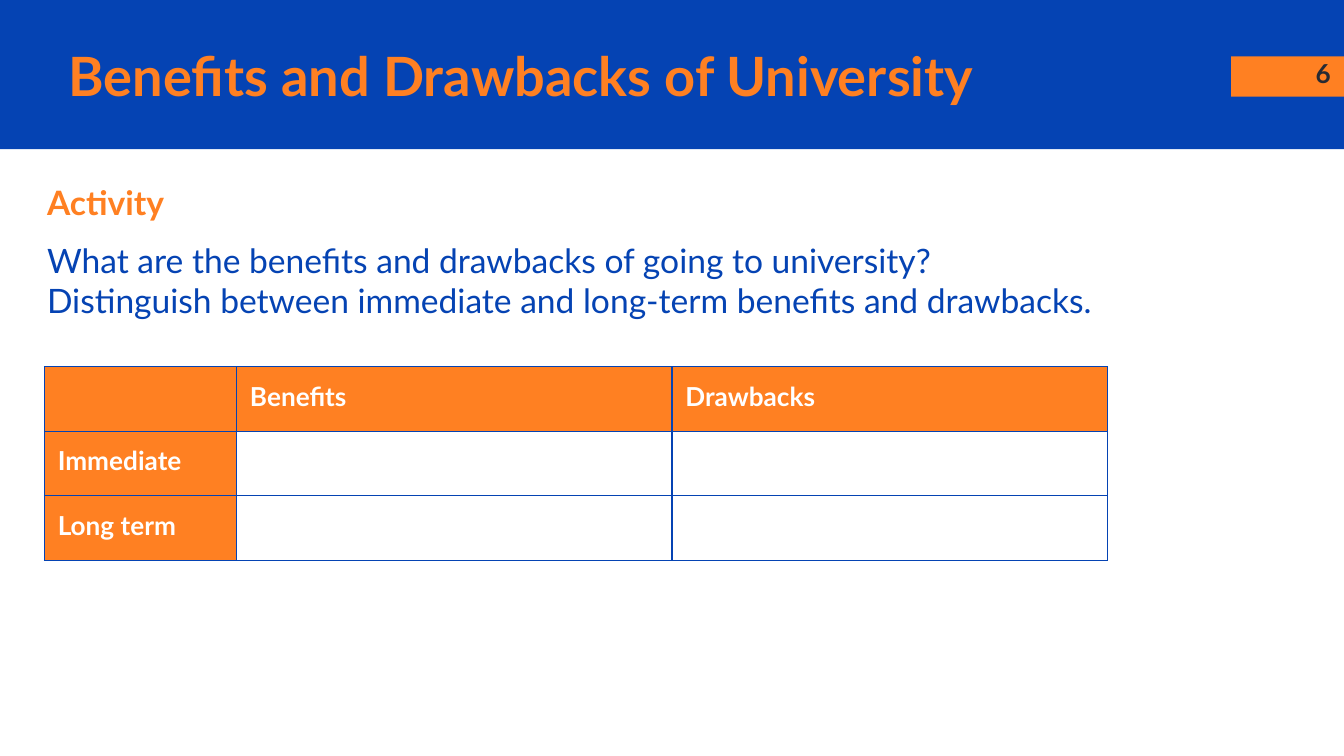
from lxml.etree import SubElement
from pptx import Presentation
from pptx.dml.color import RGBColor
from pptx.enum.shapes import MSO_SHAPE
from pptx.enum.text import MSO_ANCHOR, MSO_AUTO_SIZE, PP_ALIGN
from pptx.oxml.ns import qn
from pptx.util import Inches, Pt

BLUE = RGBColor(0x05, 0x43, 0xB3)
ORANGE = RGBColor(0xFF, 0x80, 0x22)
DARK = RGBColor(0x26, 0x2A, 0x33)
WHITE = RGBColor(0xFF, 0xFF, 0xFF)
WIDE = Inches(10)
HEADS = ["", "Benefits", "Drawbacks"]
ROWS = [HEADS, ["Immediate", "", ""], ["Long term", "", ""]]
WIDTHS = [1.43, 3.24, 3.24]
MARGINS = ("margin_left", "margin_right", "margin_top", "margin_bottom")


def assign(item, values):
    """Set each attribute of item from a dict."""
    for name, value in values.items():
        setattr(item, name, value)


def write(para, text, size, color, bold=True, **layout):
    """Fill a paragraph with one formatted run."""
    assign(para, {"space_before": Pt(0), **layout})
    run = para.add_run()
    run.text = text
    assign(run.font, {"name": "Lato", "size": Pt(size), "bold": bold})
    run.font.color.rgb = color


def place(shape, left, top, width, height):
    """Move and resize a shape, in inches."""
    sides = zip(("left", "top", "width", "height"), (left, top, width, height))
    assign(shape, {name: Inches(size) for name, size in sides})


def set_frame(frame, anchor):
    """Give a text frame even margins and return it."""
    assign(frame, dict.fromkeys(MARGINS, Inches(0.1)))
    assign(frame, {"word_wrap": True, "auto_size": MSO_AUTO_SIZE.NONE,
                   "vertical_anchor": anchor})
    return frame


def add_bar(slide, color, *box):
    """Add a plain filled rectangle."""
    bar = slide.shapes.add_shape(MSO_SHAPE.RECTANGLE, *map(Inches, box))
    bar.shadow.inherit = False
    bar.fill.solid()
    bar.fill.fore_color.rgb = color
    bar.line.fill.background()


def add_title(slide, text):
    """Fill the title placeholder and lift it above the bars."""
    title = slide.shapes.title
    place(title, 0.41, 0.28, 8.46, 0.56)
    frame = set_frame(title.text_frame, MSO_ANCHOR.MIDDLE)
    write(frame.paragraphs[0], text, 29, ORANGE, alignment=PP_ALIGN.LEFT)
    slide.shapes._spTree.append(title._element)


def add_number(slide, text):
    """Add the page number."""
    box = slide.shapes.add_textbox(*map(Inches, (9.4, 0.33, 0.6, 0.43)))
    frame = set_frame(box.text_frame, MSO_ANCHOR.TOP)
    write(frame.paragraphs[0], text, 14, DARK, alignment=PP_ALIGN.RIGHT)


def add_body(slide, head, lines):
    """Fill the body placeholder with a heading and plain lines."""
    body = slide.placeholders[1]
    place(body, 0.25, 1.25, 9.5, 1.25)
    frame = set_frame(body.text_frame, MSO_ANCHOR.TOP)
    for index, text in enumerate([head, *lines]):
        para = frame.add_paragraph() if index else frame.paragraphs[0]
        props = para._p.get_or_add_pPr()
        props.set("marL", "0")
        props.set("indent", "0")
        SubElement(props, qn("a:buNone"))
        write(para, text, 18, BLUE if index else ORANGE, bold=index == 0,
              space_before=Pt(9.5 if index == 1 else 0))


def add_border(cell):
    """Draw a thin blue line on all sides of a cell."""
    props = cell._tc.get_or_add_tcPr()
    for side in "LRTB":
        line = SubElement(props, qn(f"a:ln{side}"), w=str(Pt(0.75)))
        fill = SubElement(line, qn("a:solidFill"))
        SubElement(fill, qn("a:srgbClr"), val=str(BLUE))


def add_grid(slide):
    """Add the table of benefits and drawbacks."""
    size = map(Inches, (0.33, 2.73, sum(WIDTHS), 0.48 * len(ROWS)))
    table = slide.shapes.add_table(len(ROWS), len(WIDTHS), *size).table
    for column, width in zip(table.columns, WIDTHS):
        column.width = Inches(width)
    for y, row in enumerate(ROWS):
        for x, text in enumerate(row):
            cell = table.cell(y, x)
            add_border(cell)
            if x and y:
                cell.fill.background()
            else:
                cell.fill.solid()
                cell.fill.fore_color.rgb = ORANGE
            if text:
                assign(cell, dict.fromkeys(MARGINS, Inches(0.1)))
                write(cell.text_frame.paragraphs[0], text, 14, WHITE)


def main():
    """Build and save the slide."""
    deck = Presentation()
    assign(deck, {"slide_width": WIDE, "slide_height": WIDE * 9 // 16})
    slide = deck.slides.add_slide(deck.slide_layouts[1])
    add_bar(slide, BLUE, 0, 0, 10, 1.11)
    add_bar(slide, ORANGE, 9.16, 0.42, 0.84, 0.3)
    add_title(slide, "Benefits and Drawbacks of University")
    add_number(slide, "6")
    add_body(slide, "Activity", [
        "What are the benefits and drawbacks of going to university?",
        "Distinguish between immediate and long-term benefits and drawbacks.",
    ])
    add_grid(slide)
    deck.save("out.pptx")


if __name__ == "__main__":
    main()
